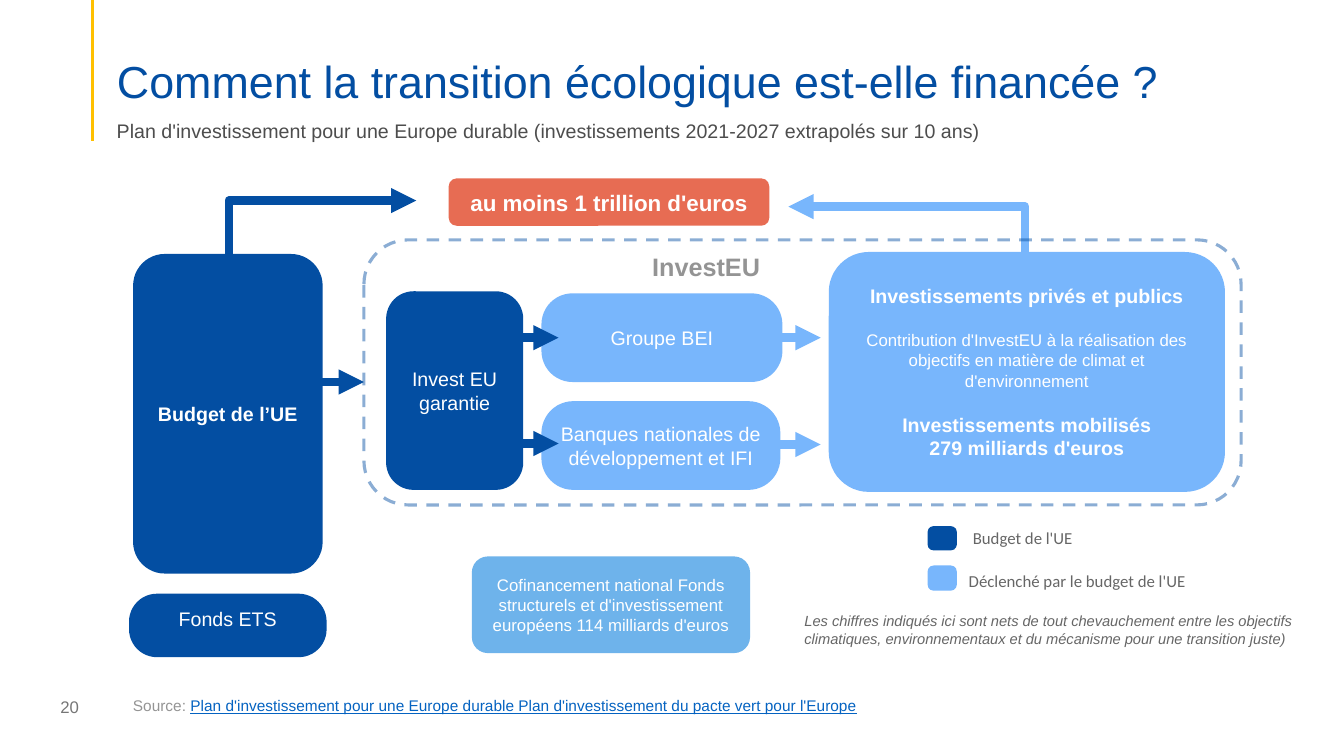
from dataclasses import dataclass

from lxml.etree import SubElement
from pptx import Presentation
from pptx.dml.color import RGBColor
from pptx.enum.dml import MSO_LINE
from pptx.enum.shapes import MSO_CONNECTOR, MSO_SHAPE
from pptx.enum.text import MSO_ANCHOR, MSO_AUTO_SIZE, PP_ALIGN
from pptx.oxml.ns import qn
from pptx.util import Pt

PX = 9144
NAVY, SKY, CORAL, PALE = "034EA2", "78B6FC", "E76C53", "6EB3EB"
WHITE, SLATE, GREY, YELLOW = "FFFFFF", "666666", "949494", "FFC000"
LEFT, CENTER = PP_ALIGN.LEFT, PP_ALIGN.CENTER
TOP, MIDDLE, BOTTOM = MSO_ANCHOR.TOP, MSO_ANCHOR.MIDDLE, MSO_ANCHOR.BOTTOM


@dataclass
class Line:
    text: str
    size: float
    color: str = WHITE
    bold: bool = False
    italic: bool = False
    font: str = "Arial"
    before: int = 0


@dataclass
class Box:
    at: tuple[int, int, int, int]
    fill: str
    lines: tuple[Line, ...] = ()
    corner: float = 0.1667
    anchor: MSO_ANCHOR = MIDDLE


@dataclass
class Note:
    at: tuple[int, int, int, int]
    line: Line
    anchor: MSO_ANCHOR = TOP


@dataclass
class Arrow:
    start: tuple[int, int]
    end: tuple[int, int]
    color: str
    bent: bool = False


def rgb(color: str) -> RGBColor:
    return RGBColor.from_string(color)


def px(*lengths: int) -> list[int]:
    return [length * PX for length in lengths]


def format_run(run, line: Line) -> None:
    run.font.name = line.font
    run.font.size = Pt(line.size)
    run.font.bold = line.bold
    run.font.italic = line.italic
    run.font.color.rgb = rgb(line.color)


def write(frame, lines: tuple[Line, ...], align: PP_ALIGN, anchor: MSO_ANCHOR) -> None:
    frame.word_wrap = True
    frame.vertical_anchor = anchor
    frame.text = "\n".join(line.text for line in lines)
    for paragraph, line in zip(frame.paragraphs, lines):
        paragraph.alignment = align
        if line.before:
            paragraph.space_before = Pt(line.before)
        for run in paragraph.runs:
            format_run(run, line)


def tighten(frame) -> None:
    frame.margin_bottom = 0
    frame.paragraphs[0].line_spacing = 0.9


def add_box(slide, box: Box) -> None:
    shape = slide.shapes.add_shape(MSO_SHAPE.ROUNDED_RECTANGLE, *px(*box.at))
    shape.shadow.inherit = False
    shape.adjustments[0] = box.corner
    shape.fill.solid()
    shape.fill.fore_color.rgb = rgb(box.fill)
    shape.line.fill.background()
    if box.lines:
        write(shape.text_frame, box.lines, CENTER, box.anchor)


def add_note(slide, note: Note):
    frame = slide.shapes.add_textbox(*px(*note.at)).text_frame
    write(frame, (note.line,), LEFT, note.anchor)
    return frame


def add_rule(slide, start: tuple[int, int], end: tuple[int, int], color: str,
             width: float, bent: bool = False):
    kind = MSO_CONNECTOR.ELBOW if bent else MSO_CONNECTOR.STRAIGHT
    rule = slide.shapes.add_connector(kind, *px(*start, *end))
    rule.line.color.rgb = rgb(color)
    rule.line.width = Pt(width)
    properties = rule._element.spPr
    SubElement(properties, qn("a:effectLst"))
    if bent:
        guides = properties.find(qn("a:prstGeom")).find(qn("a:avLst"))
        SubElement(guides, qn("a:gd"), name="adj1", fmla="val 500")
    return rule


def add_arrow(slide, arrow: Arrow) -> None:
    rule = add_rule(slide, arrow.start, arrow.end, arrow.color, 6, arrow.bent)
    stroke = rule.line._get_or_add_ln()
    SubElement(stroke, qn("a:round"))
    SubElement(stroke, qn("a:tailEnd"), type="triangle")


def add_dashed_frame(slide, at: tuple[int, int, int, int]) -> None:
    frame = slide.shapes.add_shape(MSO_SHAPE.ROUNDED_RECTANGLE, *px(*at))
    frame.shadow.inherit = False
    frame.fill.background()
    frame.line.color.rgb = rgb(NAVY)
    frame.line.width = Pt(2.25)
    frame.line.dash_style = MSO_LINE.DASH
    tint = frame.line._get_or_add_ln().find(qn("a:solidFill"))[0]
    SubElement(tint, qn("a:alpha"), val="46000")


BOXES = (
    Box((132, 252, 188, 317), NAVY, (Line("Budget de l’UE", 14, bold=True),)),
    Box((383, 289, 136, 197), NAVY, (Line("Invest EU garantie", 14),), 0.2),
    Box((537, 291, 239, 88), SKY, (Line("Groupe BEI", 14),), 0.35),
    Box((537, 398, 237, 88), SKY,
        (Line("Banques nationales de développement et IFI", 14),), 0.36),
    Box((822, 250, 393, 238), SKY, (
        Line("Investissements privés et publics", 14, bold=True),
        Line("Contribution d'InvestEU à la réalisation des objectifs en matière "
             "de climat et d'environnement", 12, before=16),
        Line("Investissements mobilisés\v279 milliards d'euros", 14, bold=True, before=16),
    )),
    Box((445, 177, 318, 47), CORAL, (Line("au moins 1 trillion d'euros", 16, bold=True),)),
    Box((128, 589, 196, 63), NAVY, (Line("Fonds ETS", 14),), 0.44, TOP),
    Box((468, 552, 276, 96), PALE,
        (Line("Cofinancement national Fonds structurels et d'investissement "
              "européens 114 milliards d'euros", 12),)),
    Box((920, 522, 29, 24), NAVY, corner=0.24),
    Box((920, 561, 29, 25), SKY, corner=0.24),
)

NOTES = (
    Note((955, 519, 194, 30), Line("Budget de l'UE", 12, SLATE, font="Calibri")),
    Note((951, 561, 310, 30),
         Line("Déclenché par le budget de l'UE", 12, SLATE, font="Calibri")),
    Note((637, 244, 158, 40), Line("InvestEU", 18, GREY, bold=True)),
    Note((788, 602, 515, 47),
         Line("Les chiffres indiqués ici sont nets de tout chevauchement entre les "
              "objectifs climatiques, environnementaux et du mécanisme pour une "
              "transition juste)", 10.5, SLATE, italic=True)),
    Note((50, 681, 300, 40), Line("20", 12, "767676"), MIDDLE),
)

ARROWS = (
    Arrow((310, 379), (361, 379), NAVY),
    *(Arrow((502, y), (554, y), NAVY) for y in (335, 440)),
    *(Arrow((763, y), (814, y), SKY) for y in (335, 441)),
    Arrow((226, 264), (413, 199), NAVY, True),
    Arrow((1018, 250), (782, 205), SKY, True),
)


def main() -> None:
    deck = Presentation()
    deck.slide_width, deck.slide_height = px(1333, 750)
    slide = deck.slides.add_slide(deck.slide_layouts[5])

    title = slide.shapes.title
    title.left, title.top, title.width, title.height = px(106, 21, 1150, 86)
    heading = Line("Comment la transition écologique est-elle financée ?", 32, NAVY)
    write(title.text_frame, (heading,), LEFT, BOTTOM)
    title.text_frame.auto_size = MSO_AUTO_SIZE.NONE
    tighten(title.text_frame)

    add_rule(slide, (92, 0), (92, 140), YELLOW, 2.25)
    subtitle = add_note(slide, Note((106, 108, 1094, 34), Line(
        "Plan d'investissement pour une Europe durable "
        "(investissements 2021-2027 extrapolés sur 10 ans)", 14, "4D4D4D"), BOTTOM))
    tighten(subtitle)

    for box in BOXES:
        add_box(slide, box)
    for note in NOTES:
        add_note(slide, note)
    for arrow in ARROWS:
        add_arrow(slide, arrow)
    add_dashed_frame(slide, (361, 238, 870, 263))

    source = add_note(slide, Note((122, 686, 963, 29), Line("Source: ", 11, GREY)))
    reference = source.paragraphs[0].add_run()
    reference.text = ("Plan d'investissement pour une Europe durable "
                      "Plan d'investissement du pacte vert pour l'Europe")
    format_run(reference, Line(reference.text, 11, "0563C1"))
    reference.font.underline = True

    deck.save("out.pptx")


if __name__ == "__main__":
    main()
